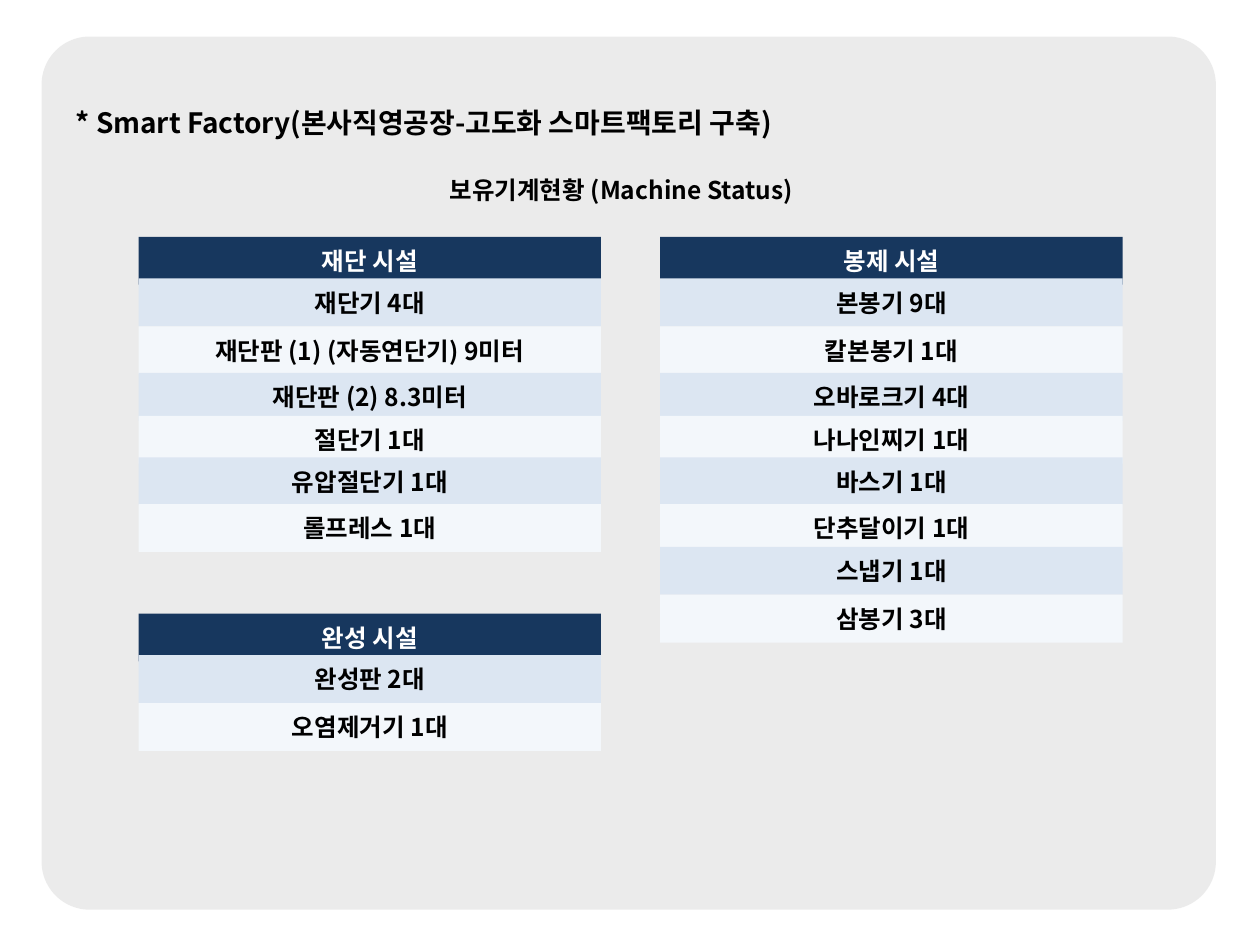
from lxml.etree import SubElement
from pptx import Presentation
from pptx.dml.color import RGBColor
from pptx.enum.shapes import MSO_SHAPE
from pptx.enum.text import MSO_ANCHOR, MSO_AUTO_SIZE, PP_ALIGN
from pptx.oxml.ns import qn
from pptx.util import Inches, Pt

FONT = "Noto Sans CJK KR"
COLORS = {
    "panel": "D9D9D9",
    "header": "17375E",
    "odd": "DCE6F2",
    "even": "F3F7FB",
    "text": "000000",
    "header_text": "FFFFFF",
}

# Table grid, in inches: two columns and the row tops below each header
COLUMN_LEFT, COLUMN_STEP, COLUMN_WIDTH = 1.1, 4.14, 3.67
ROW_HEIGHT = 0.38
ROW_TOPS = [0, 0.33, 0.71, 1.08, 1.42, 1.75, 2.12, 2.46, 2.84]

# Column, top of the header, header and rows
FACILITIES = [
    (0, 1.88, ["재단 시설", "재단기 4대", "재단판 (1) (자동연단기) 9미터",
               "재단판 (2) 8.3미터", "절단기 1대", "유압절단기 1대", "롤프레스 1대"]),
    (1, 1.88, ["봉제 시설", "본봉기 9대", "칼본봉기 1대", "오바로크기 4대", "나나인찌기 1대",
               "바스기 1대", "단추달이기 1대", "스냅기 1대", "삼봉기 3대"]),
    (0, 4.87, ["완성 시설", "완성판 2대", "오염제거기 1대"]),
]


def add_bold_run(paragraph, text, size, color):
    run = paragraph.add_run()
    run.text = text
    run.font.name = FONT
    run.font.size = Pt(size)
    run.font.bold = True
    run.font.color.rgb = RGBColor.from_string(COLORS[color])
    SubElement(run.font._element, qn("a:ea"), typeface=FONT)


def add_filled_shape(slide, kind, left, top, width, height, color):
    shape = slide.shapes.add_shape(
        kind, Inches(left), Inches(top), Inches(width), Inches(height))
    shape.shadow.inherit = False
    shape.fill.solid()
    shape.fill.fore_color.rgb = RGBColor.from_string(COLORS[color])
    shape.line.fill.background()
    return shape


presentation = Presentation()
presentation.slide_width = Inches(10)
presentation.slide_height = Inches(7.5)
slide = presentation.slides.add_slide(presentation.slide_layouts[5])

# Title
title = slide.shapes.title
title.left, title.top = Inches(0.5), Inches(0.52)
title.width, title.height = Inches(9), Inches(6.54)
title_frame = title.text_frame
title_frame.auto_size = MSO_AUTO_SIZE.NONE
title_frame.vertical_anchor = MSO_ANCHOR.TOP
paragraph = title_frame.paragraphs[0]
paragraph.alignment = PP_ALIGN.LEFT
paragraph.line_spacing = 2.0
add_bold_run(paragraph, "* Smart Factory(본사직영공장-고도화 스마트팩토리 구축)", 16, "text")

# Half-transparent panel, placed behind the title
panel = add_filled_shape(
    slide, MSO_SHAPE.ROUNDED_RECTANGLE, 0.33, 0.29, 9.32, 6.93, "panel")
panel.adjustments[0] = 0.055
panel_color = panel.element.spPr.find(qn("a:solidFill")).find(qn("a:srgbClr"))
SubElement(panel_color, qn("a:alpha"), val="50000")
title.element.addprevious(panel.element)

# Subtitle
subtitle = slide.shapes.add_textbox(
    Inches(3.47), Inches(1.34), Inches(3.02), Inches(0.34))
subtitle.text_frame.word_wrap = False
subtitle.text_frame.auto_size = MSO_AUTO_SIZE.SHAPE_TO_FIT_TEXT
add_bold_run(subtitle.text_frame.paragraphs[0], "보유기계현황 (Machine Status)", 14, "text")

# Machine lists: a dark header, then rows of alternating colour
for column, list_top, labels in FACILITIES:
    for row, label in enumerate(labels):
        if row == 0:
            fill, text_color = "header", "header_text"
        else:
            fill, text_color = ("odd" if row % 2 else "even"), "text"
        cell = add_filled_shape(
            slide, MSO_SHAPE.RECTANGLE, COLUMN_LEFT + column * COLUMN_STEP,
            list_top + ROW_TOPS[row], COLUMN_WIDTH, ROW_HEIGHT, fill)
        cell.text_frame.word_wrap = True
        cell.text_frame.vertical_anchor = MSO_ANCHOR.MIDDLE
        paragraph = cell.text_frame.paragraphs[0]
        paragraph.alignment = PP_ALIGN.CENTER
        add_bold_run(paragraph, label, 14, text_color)

presentation.save("out.pptx")
